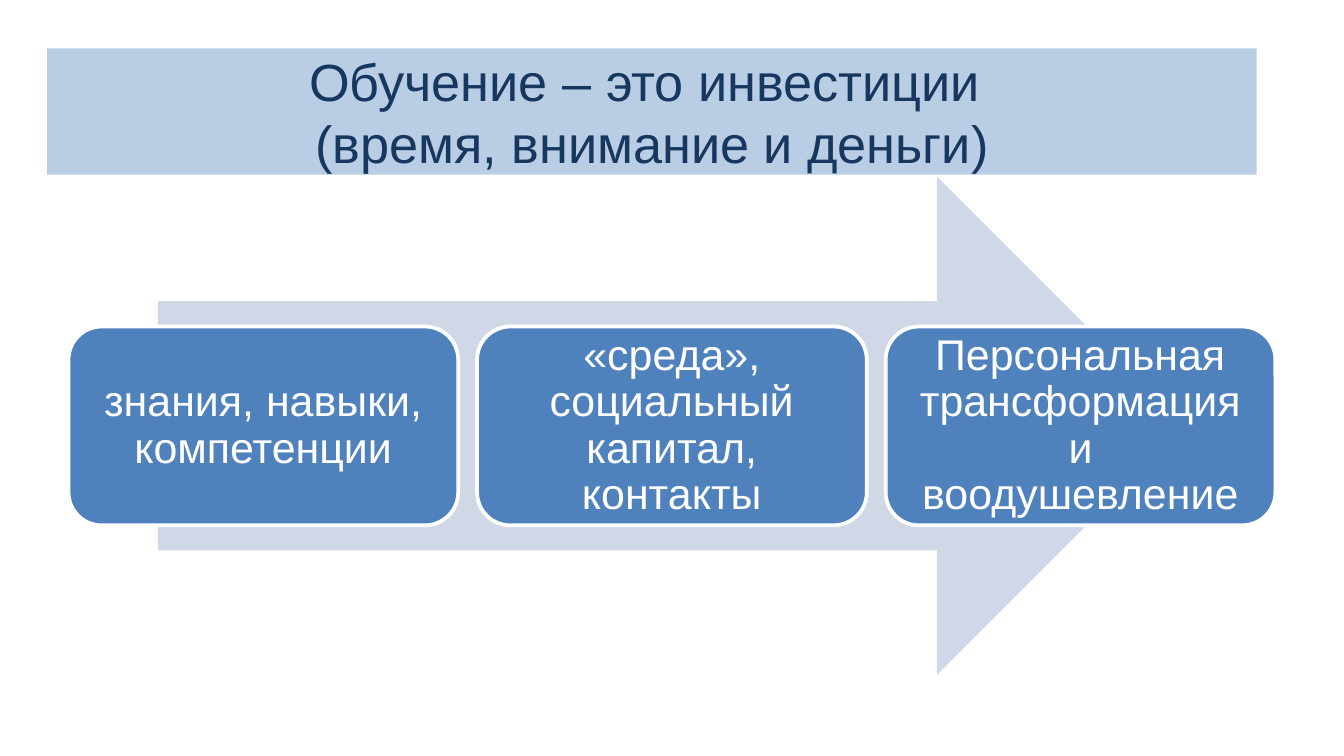
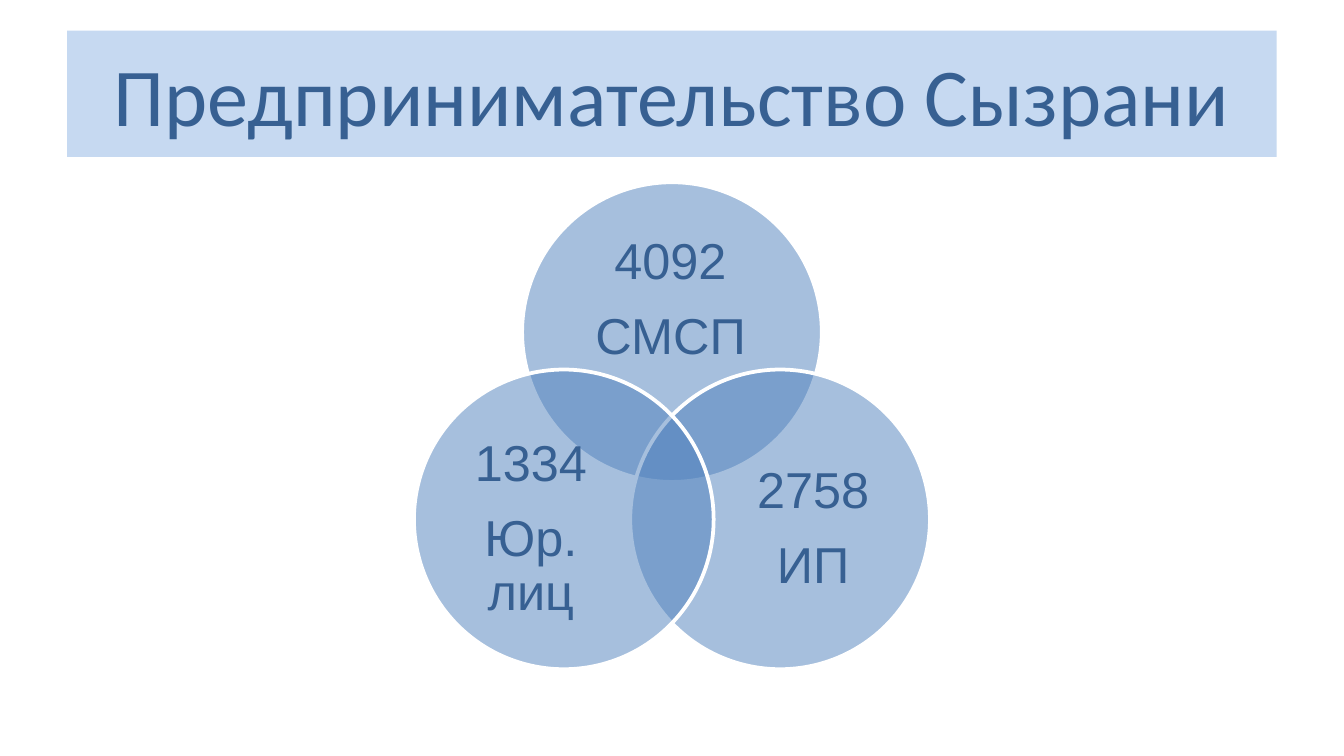
import copy
import dataclasses
import math

import lxml.etree
import pptx
import pptx.dml.color
import pptx.enum.shapes
import pptx.enum.text
import pptx.oxml.ns
import pptx.util

SHAPES = pptx.enum.shapes.MSO_SHAPE


@dataclasses.dataclass(frozen=True)
class Theme:
    width: float = 10
    height: float = 5.625
    white: str = "FFFFFF"
    accent: str = "4F81BD"
    arrow: str = "D0D8E8"
    navy: str = "17375E"
    blue: str = "376092"
    band: str = "B9CDE5"
    band_light: str = "C6D9F1"
    body_font: str = "Arial"
    title_font: str = "Calibri"
    small_title: int = 28
    large_title: int = 44
    card_size: int = 23
    circle_size: int = 27
    outline: int = 2


THEME = Theme()


def across(percent):
    return pptx.util.Inches(THEME.width * percent / 100)


def down(percent):
    return pptx.util.Inches(THEME.height * percent / 100)


def color(code):
    return pptx.dml.color.RGBColor.from_string(code)


def apply(target, values):
    for name, value in values.items():
        setattr(target, name, value)


def paint(shape, fill, outlined=False, opacity=100):
    shape.fill.solid()
    shape.fill.fore_color.rgb = color(fill)
    if opacity < 100:
        tint = shape.fill._xPr.find(".//" + pptx.oxml.ns.qn("a:srgbClr"))
        alpha = lxml.etree.SubElement(tint, pptx.oxml.ns.qn("a:alpha"))
        alpha.set("val", str(opacity * 1000))
    if outlined:
        shape.line.color.rgb = color(THEME.white)
        shape.line.width = pptx.util.Pt(THEME.outline)
    else:
        shape.line.fill.background()


def write(shape, lines, font, size, ink, inset=None, paragraph_format=None):
    frame = shape.text_frame
    apply(frame, {
        "word_wrap": True,
        "auto_size": pptx.enum.text.MSO_AUTO_SIZE.NONE,
        "vertical_anchor": pptx.enum.text.MSO_ANCHOR.MIDDLE,
    })
    if inset is not None:
        sides = ("left", "top", "right", "bottom")
        apply(frame, {"margin_" + side: pptx.util.Inches(inset) for side in sides})
    for index, line in enumerate(lines):
        para = frame.add_paragraph() if index else frame.paragraphs[0]
        para.text = line
        apply(para, {"alignment": pptx.enum.text.PP_ALIGN.CENTER, **(paragraph_format or {})})
        for span in para.runs:
            apply(span.font, {"name": font, "size": pptx.util.Pt(size)})
            span.font.color.rgb = color(ink)


def write_body(shape, lines, size, ink, inset):
    spacing = {"line_spacing": 0.9, "space_after": pptx.util.Pt(size * 0.4)}
    write(shape, lines, THEME.body_font, size, ink, inset, spacing)


def add_page(deck, title, left, top, fill, font, size, ink):
    page = deck.slides.add_slide(deck.slide_layouts[5])
    band = page.shapes.title
    apply(band, {"left": across(left), "top": down(top),
                 "width": across(90), "height": down(16.7)})
    paint(band, fill)
    write(band, [title], font, size, ink)
    return page


def add_figure(page, kind, left, top, width, height, fill, **look):
    figure = page.shapes.add_shape(kind, left, top, width, height)
    figure.shadow.inherit = False
    paint(figure, fill, **look)
    return figure


def add_arrow_process(page, steps):
    add_figure(page, SHAPES.RIGHT_ARROW, across(11.75), down(23.35),
               across(76.5), down(65.95), THEME.arrow)
    width, gap = 29, 1.4
    for index, step in enumerate(steps):
        left = across(5.1 + index * (width + gap))
        card = add_figure(page, SHAPES.ROUNDED_RECTANGLE, left, down(43.2),
                          across(width), down(26.3), THEME.accent, outlined=True)
        write_body(card, [step], THEME.card_size, THEME.white, 0.1)


def add_venn(page, groups):
    diameter = across(22.3)
    radius = diameter * 5 / 12
    text_areas = [(0.13, 0.17, 0.73, 0.45), (0.31, 0.26, 0.6, 0.55), (0.09, 0.26, 0.6, 0.55)]
    for index, (lines, area) in enumerate(zip(groups, text_areas)):
        angle = math.radians(120 * index - 90)
        left = int(across(50) + radius * math.cos(angle) - diameter / 2)
        top = int(down(60.45) + radius * math.sin(angle) - diameter / 2)
        add_figure(page, SHAPES.OVAL, left, top, diameter, diameter,
                   THEME.accent, outlined=True, opacity=50)
        x, y, width, height = (int(diameter * share) for share in area)
        box = page.shapes.add_textbox(left + x, top + y, width, height)
        write_body(box, lines, THEME.circle_size, THEME.blue, 0)


def main():
    deck = pptx.Presentation()
    apply(deck, {"slide_width": across(100), "slide_height": down(100)})

    page = add_page(deck, "Обучение – это инвестиции \v(время, внимание и деньги)", 3.5, 6.4,
                    THEME.band, THEME.body_font, THEME.small_title, THEME.navy)
    add_arrow_process(page, [
        "знания, навыки, компетенции",
        "«среда», социальный капитал, контакты",
        "Персональная трансформация и воодушевление",
    ])

    page = add_page(deck, "Предпринимательство Сызрани", 5, 4.05,
                    THEME.band_light, THEME.title_font, THEME.large_title, THEME.blue)
    add_venn(page, [("4092", "СМСП"), ("2758", "ИП"), ("1334", "Юр. лиц")])

    deck.save("out.pptx")


if __name__ == "__main__":
    main()
